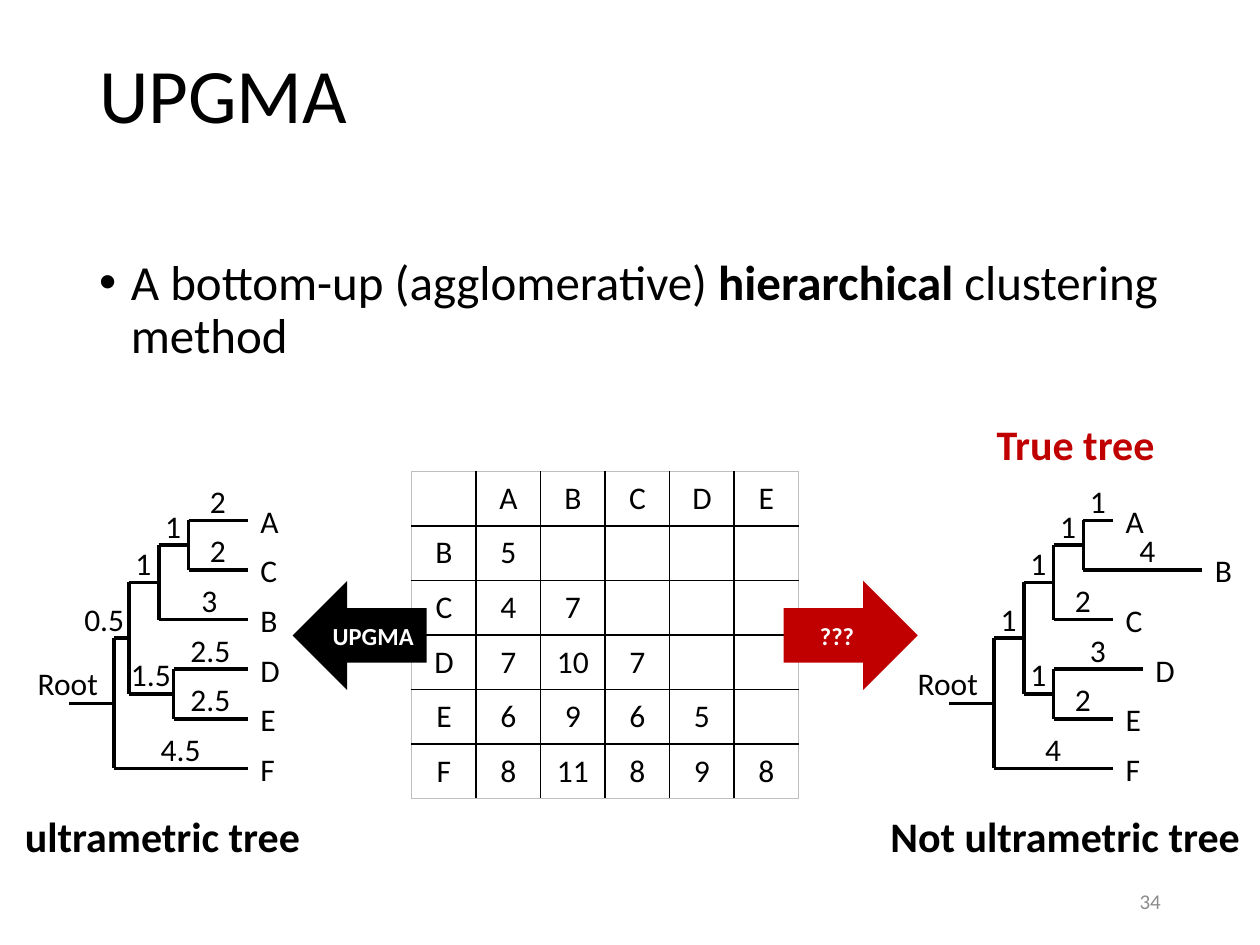
from dataclasses import dataclass

from lxml import etree
from pptx import Presentation
from pptx import util as u
from pptx.dml.color import RGBColor
from pptx.enum import shapes, text
from pptx.oxml import ns

BLACK, RED, WHITE, GRAY, EDGE = "000000", "C00000", "FFFFFF", "8C8C8C", "BFBFBF"
LEAF_TOP, ROW, UNIT = 10.49, 1.0, 0.6  # first leaf, leaf pitch, branch unit (cm)
LEFT, CENTER, RIGHT = text.PP_ALIGN.LEFT, text.PP_ALIGN.CENTER, text.PP_ALIGN.RIGHT
TOP, MIDDLE = text.MSO_ANCHOR.TOP, text.MSO_ANCHOR.MIDDLE


@dataclass
class Clade:
    """Node of a tree; a leaf has a name and a row, an inner node has children."""
    length: float
    name: str = ""
    leaf_row: int = 0
    children: tuple["Clade", ...] = ()
    shift: float = 0  # sideways nudge of the length label, cm

    @property
    def row(self) -> float:
        if not self.children:
            return self.leaf_row
        return sum(c.row for c in self.children) / len(self.children)

    @property
    def y(self) -> float:
        return LEAF_TOP + self.row * ROW


@dataclass
class Arrow:
    kind: shapes.MSO_SHAPE
    left: float
    label: str
    color: str


def rgb(color: str) -> RGBColor:
    return RGBColor.from_string(color)


def write(tf, content: str, size=18, color=BLACK, bold=False, align=LEFT,
          anchor=TOP, wrap=True, spacing=None):
    """Fill a text frame; parts between ** marks are bold."""
    tf.word_wrap = wrap
    tf.vertical_anchor = anchor
    p = tf.paragraphs[0]
    p.alignment = align
    p.line_spacing = spacing
    for i, part in enumerate(content.split("**")):
        r = p.add_run()
        r.text = part
        r.font.name, r.font.size = "Calibri", u.Pt(size)
        r.font.bold = bold or i % 2 == 1
        r.font.color.rgb = rgb(color)
    return p


def add_text(group, content: str, x: float, y: float, w: float, h: float = 1.02, **style):
    box = group.add_textbox(u.Cm(x), u.Cm(y), u.Cm(w), u.Cm(h))
    return write(box.text_frame, content, **style)


def add_line(group, x1: float, y1: float, x2: float, y2: float) -> None:
    c = group.add_connector(shapes.MSO_CONNECTOR.STRAIGHT,
                            u.Cm(x1), u.Cm(y1), u.Cm(x2), u.Cm(y2))
    c.line.color.rgb, c.line.width = rgb(BLACK), u.Pt(2)
    etree.SubElement(c._element.spPr, ns.qn("a:effectLst"))


def draw_clade(group, clade: Clade, x: float) -> None:
    """Draw the fork at x, then every branch and what hangs on it."""
    add_line(group, x, clade.children[0].y, x, clade.children[-1].y)
    for child in clade.children:
        end = x + child.length * UNIT
        add_line(group, x, child.y, end, child.y)
        label = f"{child.length:g}"
        w = 0.84 if len(label) == 1 else 1.32
        add_text(group, label, (x + end - w) / 2 + child.shift, child.y - 0.9, w, wrap=False)
        if child.children:
            draw_clade(group, child, end)
        else:
            add_text(group, child.name, end, child.y - 0.5, 0.88, wrap=False)


def draw_tree(slide, root: Clade, x: float):
    group = slide.shapes.add_group_shape().shapes
    add_line(group, x - 0.9, root.y, x, root.y)
    add_text(group, "Root", x - 1.79, root.y - 0.92, 1.73, wrap=False)
    draw_clade(group, root, x)
    return group


def set_borders(cell, outer: dict[str, bool]) -> None:
    pr = cell._tc.get_or_add_tcPr()
    for i, (side, is_outer) in enumerate(outer.items()):
        ln = etree.Element(ns.qn(f"a:ln{side}"), w=str(u.Pt(0.5 if is_outer else 1)))
        fill = etree.SubElement(ln, ns.qn("a:solidFill"))
        etree.SubElement(fill, ns.qn("a:srgbClr"), val=EDGE if is_outer else BLACK)
        pr.insert(i, ln)


def draw_matrix(slide, rows: list[list[str]], x: float, y: float, w: float, h: float) -> None:
    n = len(rows)
    frame = slide.shapes.add_table(n, n, u.Cm(x), u.Cm(y), u.Cm(w * n), u.Cm(h * n))
    table = frame.table
    table.first_row = table.horz_banding = False
    for i, row in enumerate(rows):
        table.rows[i].height, table.columns[i].width = u.Cm(h), u.Cm(w)
        for j in range(n):
            cell = table.cell(i, j)
            cell.fill.background()
            set_borders(cell, {"L": j == 0, "R": j == n - 1, "T": i == 0, "B": i == n - 1})
            cell.vertical_anchor = MIDDLE
            write(cell.text_frame, row[j] if j < len(row) else "", align=CENTER, anchor=None)


def draw_arrow(slide, arrow: Arrow) -> None:
    s = slide.shapes.add_shape(arrow.kind, u.Cm(arrow.left), u.Cm(11.71), u.Cm(2.7), u.Cm(2.2))
    s.shadow.inherit = False
    s.fill.solid()
    s.fill.fore_color.rgb = rgb(arrow.color)
    s.line.fill.background()
    write(s.text_frame, arrow.label, size=14, color=WHITE, bold=True,
          align=CENTER, anchor=MIDDLE)


DISTANCES = [["", "A", "B", "C", "D", "E"],
             ["B", "5"],
             ["C", "4", "7"],
             ["D", "7", "10", "7"],
             ["E", "6", "9", "6", "5"],
             ["F", "8", "11", "8", "9", "8"]]

ULTRAMETRIC = Clade(0, children=(
    Clade(0.5, shift=-0.34, children=(
        Clade(1, children=(
            Clade(1, children=(Clade(2, "A", 0), Clade(2, "C", 1))),
            Clade(3, "B", 2, shift=0.13))),
        Clade(1.5, children=(Clade(2.5, "D", 3), Clade(2.5, "E", 4))))),
    Clade(4.5, "F", 5)))

TRUE_TREE = Clade(0, children=(
    Clade(1, children=(
        Clade(1, children=(
            Clade(1, children=(Clade(1, "A", 0), Clade(4, "B", 1, shift=0.1))),
            Clade(2, "C", 2))),
        Clade(1, children=(Clade(3, "D", 3), Clade(2, "E", 4))))),
    Clade(4, "F", 5)))

ARROWS = [Arrow(shapes.MSO_SHAPE.RIGHT_ARROW, 15.8, "???", RED),
          Arrow(shapes.MSO_SHAPE.LEFT_ARROW, 5.9, "UPGMA", BLACK)]


def main() -> None:
    prs = Presentation()
    prs.slide_width, prs.slide_height = u.Cm(25.4), u.Cm(19.05)
    slide = prs.slides.add_slide(prs.slide_layouts[6])

    p = add_text(slide.shapes, "A bottom-up (agglomerative) **hierarchical **clustering method",
                 1.75, 5.08, 21.9, 12.09, size=28, spacing=0.9)
    pr = p._p.get_or_add_pPr()
    pr.set("marL", str(u.Cm(0.64)))
    pr.set("indent", str(u.Cm(-0.64)))
    etree.SubElement(pr, ns.qn("a:buFont"), typeface="Arial")
    etree.SubElement(pr, ns.qn("a:buChar"), char="•")
    add_text(slide.shapes, "UPGMA", 1.75, 1.02, 21.9, 3.68, size=44, spacing=0.9)
    add_text(slide.shapes, "34", 17.93, 17.65, 5.72, size=12, color=GRAY,
             align=RIGHT, anchor=MIDDLE)

    draw_matrix(slide, DISTANCES, 8.3, 9.5, 1.3, 1.1)
    for arrow in ARROWS:
        draw_arrow(slide, arrow)

    true_group = draw_tree(slide, TRUE_TREE, 20.04)
    add_text(true_group, "True tree", 19.84, 8.31, 3.73, 1.27, size=24, color=RED,
             bold=True, wrap=False)
    draw_tree(slide, ULTRAMETRIC, 2.3)
    for caption, x, w in (("ultrametric tree", 0.25, 6.12), ("Not ultrametric tree", 17.7, 7.62)):
        add_text(slide.shapes, caption, x, 16.21, w, 1.27, size=24, bold=True, wrap=False)

    prs.save("out.pptx")


if __name__ == "__main__":
    main()
